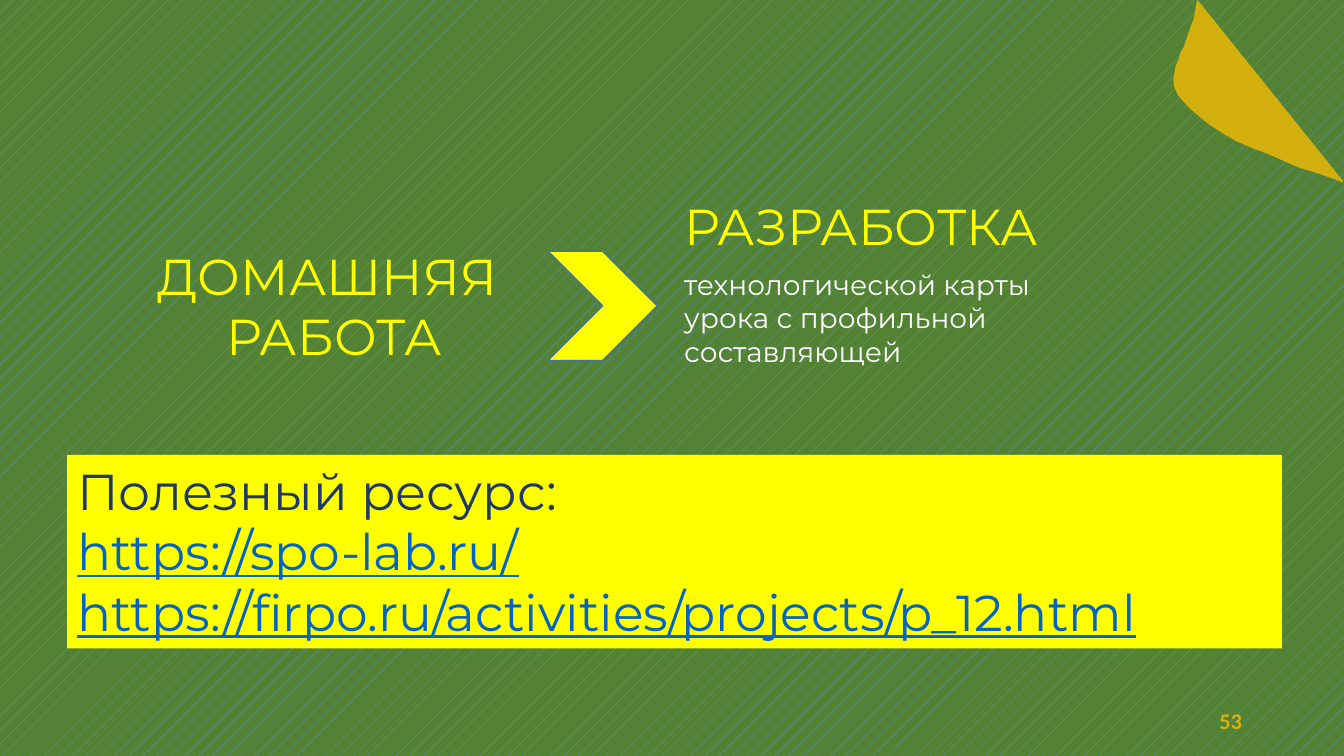
from lxml import etree
from pptx import Presentation
from pptx.dml.color import RGBColor
from pptx.enum import dml, shapes, text
from pptx.oxml.ns import qn
from pptx.util import Pt

COLORS = {
    "green": "548235", "blue": "5B9BD5", "yellow": "FFFF00", "white": "FFFFFF",
    "amber": "FFC000", "gold": "D3B00E", "steel": "43739E", "navy": "203864",
    "link": "0563C1",
}


def rgb(name):
    return RGBColor.from_string(COLORS[name])


class SlideBuilder:
    """Holds the slide and its text style, and adds elements in points."""

    def __init__(self, slide, font):
        self.slide = slide
        self.font = font

    def background(self, fore, back):
        fill = self.slide.background.fill
        fill.patterned()
        fill.pattern = dml.MSO_PATTERN.PERCENT_5
        fill.fore_color.rgb = rgb(fore)
        fill.back_color.rgb = rgb(back)

    def paint(self, shape, fill, line=None, opacity=100):
        shape.shadow.inherit = False
        shape.fill.solid()
        shape.fill.fore_color.rgb = rgb(fill)
        if opacity < 100:
            color = shape.element.spPr.find(qn("a:solidFill"))[0]
            etree.SubElement(color, qn("a:alpha"), val=str(opacity * 1000))
        if line:
            shape.line.color.rgb = rgb(line)
            shape.line.width = Pt(1)
        else:
            shape.line.fill.background()

    def shape(self, kind, box, fill, line=None):
        shape = self.slide.shapes.add_shape(kind, *map(Pt, box))
        self.paint(shape, fill, line)
        return shape

    def outline(self, points, fill, line, opacity):
        start, *rest = [(Pt(x), Pt(y)) for x, y in points]
        builder = self.slide.shapes.build_freeform(*start, scale=1.0)
        builder.add_line_segments(rest, close=True)
        self.paint(builder.convert_to_shape(), fill, line, opacity)

    def fill_text(self, frame, lines, color, size, align="LEFT", anchor="TOP",
                  fit=True, **format_values):
        """Each line is plain text or a (text, own format) pair."""
        frame.word_wrap = True
        frame.vertical_anchor = text.MSO_ANCHOR[anchor]
        if fit:
            frame.auto_size = text.MSO_AUTO_SIZE.SHAPE_TO_FIT_TEXT
        for index, line in enumerate(lines):
            words, own = (line, {}) if isinstance(line, str) else line
            paragraph = frame.add_paragraph() if index else frame.paragraphs[0]
            paragraph.alignment = text.PP_ALIGN[align]
            run = paragraph.add_run()
            run.text = words
            values = {"name": self.font, "size": Pt(size), "color": color,
                      **format_values, **own}
            run.font.color.rgb = rgb(values.pop("color"))
            for attribute, value in values.items():
                setattr(run.font, attribute, value)

    def textbox(self, box, lines, color, size, **options):
        frame = self.slide.shapes.add_textbox(*map(Pt, box)).text_frame
        self.fill_text(frame, lines, color, size, **options)


def main():
    deck = Presentation()
    deck.slide_width, deck.slide_height = Pt(960), Pt(540)
    page = SlideBuilder(deck.slides.add_slide(deck.slide_layouts[6]), "Montserrat")
    page.background("blue", "green")

    # Corner leaf
    leaf = [
        (855.4, 0.7), (853.9, 9.4), (853.2, 13.7), (850.3, 20.9), (846, 33.8),
        (843.8, 37.4), (842.4, 42.5), (840.2, 47.5), (838.8, 55.4),
        (838.8, 60.5), (840.2, 64.1), (842.4, 68.4), (846.7, 73.4),
        (851, 77.8), (856.1, 82.1), (860.4, 85.7), (866.2, 90),
        (874.1, 95), (882.7, 100.1), (895.7, 105.8), (902.2, 108),
        (910.8, 111.6), (920.2, 115.9), (928.8, 119.5), (938.9, 122.4),
        (951.1, 126.7), (959, 129.6),
    ]
    page.outline(leaf, "amber", "gold", opacity=74)

    # Homework, arrow and task
    page.textbox((100, 171.4, 277.2, 94.3), ["ДОМАШНЯЯ ", "РАБОТА"],
                 "yellow", 36, align="CENTER")
    page.shape(shapes.MSO_SHAPE.CHEVRON, (391.5, 179.5, 78, 78), "yellow", "steel")
    page.textbox((481.7, 136, 288, 51), ["РАЗРАБОТКА"], "yellow", 36)
    page.textbox((481.7, 187.2, 295.2, 80),
                 ["технологической карты", "урока с профильной", "составляющей"],
                 "white", 20)

    # Useful resource panel
    link = {"color": "link", "underline": True}
    resource = page.shape(shapes.MSO_SHAPE.RECTANGLE, (48, 325, 867.6, 138.2), "yellow")
    page.fill_text(resource.text_frame,
                   ["Полезный ресурс:", ("https://spo-lab.ru/", link),
                    ("https://firpo.ru/activities/projects/p_12.html", link)],
                   "navy", 36)

    # Page number
    page.textbox((678.2, 500.5, 216, 28.8), ["53"], "gold", 16, align="RIGHT",
                 anchor="MIDDLE", fit=False, name="Calibri", bold=True)

    deck.save("out.pptx")


if __name__ == "__main__":
    main()
